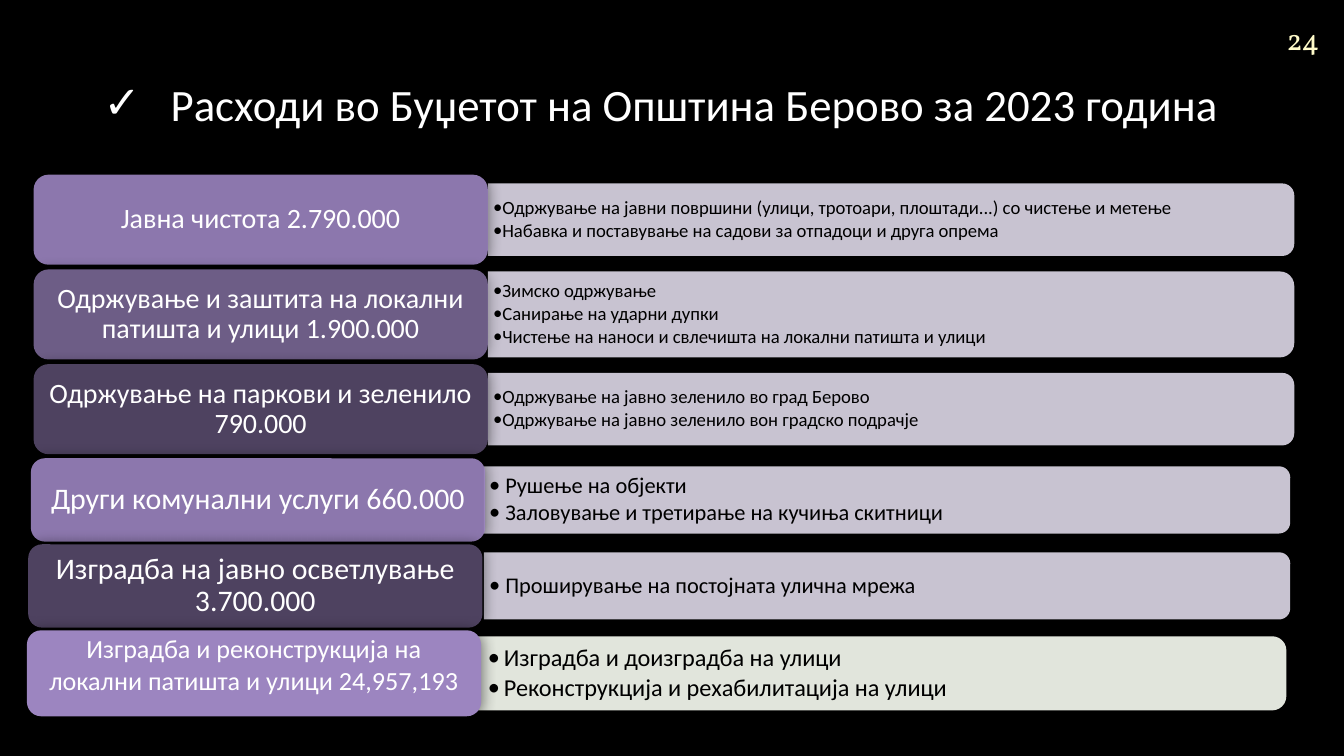
from dataclasses import dataclass

from lxml.etree import SubElement
from pptx import Presentation
from pptx.dml.color import RGBColor
from pptx.enum.shapes import MSO_SHAPE
from pptx.enum.text import MSO_ANCHOR, MSO_AUTO_SIZE, PP_ALIGN
from pptx.oxml.ns import qn
from pptx.util import Inches, Pt


@dataclass(frozen=True)
class Theme:
    font: str = "Calibri"
    number_font: str = "Vollkorn"
    background: str = "000000"
    light: str = "FFFFFF"
    dark: str = "000000"
    number: str = "FEFAC9"
    label: str = "9C85C0"
    panel: str = "DED9E8"
    accent_panel: str = "E1E5DC"
    title_size: int = 24
    number_size: int = 16


THEME = Theme()
SLIDE_WIDTH = 10
SLIDE_HEIGHT = SLIDE_WIDTH * 9 / 16
LABEL_WIDTH, PANEL_WIDTH = 0.338 * SLIDE_WIDTH, 0.6 * SLIDE_WIDTH

# Content
TITLE = "Расходи во Буџетот на Општина Берово за 2023 година"
PAGE_NUMBER = "24"

# Each band stacks its rows at an equal pitch
BANDS = [
    {
        "top": 1.3, "pitch": 0.705, "label_height": 0.67, "panel_left": 3.63,
        "label_size": 15, "item_size": 10, "indent": 0.06, "inset": 0.04, "label_spacing": 0.9,
        "label_bottom": 0.03, "outline": 0, "panel_color": THEME.panel, "panel_alpha": 90,
        "rows": [
            {"label": "Јавна чистота 2.790.000", "left": 0.25, "alpha": 90, "panel_height": 0.54,
             "items": ["Одржување на јавни површини (улици, тротоари, плоштади...) со чистење и метење",
                       "Набавка и поставување на садови за отпадоци и друга опрема"]},
            {"label": "Одржување и заштита на локални патишта и улици 1.900.000",
             "left": 0.25, "alpha": 70, "panel_height": 0.64,
             "items": ["Зимско одржување", "Санирање на ударни дупки",
                       "Чистење на наноси и свлечишта на локални патишта и улици"]},
            {"label": "Одржување на паркови и зеленило 790.000",
             "left": 0.25, "alpha": 50, "panel_height": 0.54,
             "items": ["Одржување на јавно зеленило во град Берово",
                       "Одржување на јавно зеленило вон градско подрачје"]},
        ],
    },
    {
        "top": 3.41, "pitch": 0.64, "label_height": 0.62, "panel_left": 3.6,
        "label_size": 16, "item_size": 12, "indent": 0.12, "inset": 0.04, "label_spacing": 0.9,
        "label_bottom": 0.03, "outline": 0, "panel_color": THEME.panel, "panel_alpha": 90,
        "rows": [
            {"label": "Други комунални услуги 660.000", "left": 0.23, "alpha": 90, "panel_height": 0.5,
             "items": ["Рушење на објекти", "Заловување и третирање на кучиња скитници"]},
            {"label": "Изградба на јавно осветлување 3.700.000",
             "left": 0.21, "alpha": 50, "panel_height": 0.5,
             "items": ["Проширување на постојната улична мрежа"]},
        ],
    },
    {
        "top": 4.69, "pitch": 0.64, "label_height": 0.64, "panel_left": 3.55,
        "label_size": 14, "item_size": 13, "indent": 0.12, "inset": 0.08, "label_spacing": 1.0,
        "label_bottom": 0.17, "outline": 3, "panel_color": THEME.accent_panel, "panel_alpha": 100,
        "rows": [
            {"label": "Изградба и реконструкција на локални патишта и улици 24,957,193",
             "left": 0.2, "alpha": 100, "panel_height": 0.51,
             "items": ["Изградба и доизградба на улици", "Реконструкција и рехабилитација на улици"]},
        ],
    },
]


def set_values(target, values):
    for name, value in values.items():
        setattr(target, name, value)


def place(shape, left, top, width, height):
    set_values(shape, {"left": Inches(left), "top": Inches(top),
                       "width": Inches(width), "height": Inches(height)})


def write(shape, lines, size, color, margins, paragraph_format, font=THEME.font,
          anchor=MSO_ANCHOR.MIDDLE):
    frame = shape.text_frame
    sides = ("margin_left", "margin_top", "margin_right", "margin_bottom")
    set_values(frame, {"word_wrap": True, "auto_size": MSO_AUTO_SIZE.NONE, "vertical_anchor": anchor,
                       **{side: Inches(margin) for side, margin in zip(sides, margins)}})
    frame.text = "\n".join(lines)
    for paragraph in frame.paragraphs:
        set_values(paragraph, paragraph_format)
        for run in paragraph.runs:
            set_values(run.font, {"size": Pt(size), "name": font})
            run.font.color.rgb = RGBColor.from_string(color)


def add_bullets(shape, character, indent, color):
    for paragraph in shape.text_frame.paragraphs:
        properties = paragraph._p.get_or_add_pPr()
        properties.set("marL", str(Inches(indent)))
        properties.set("indent", str(-Inches(indent)))
        bullet_color = SubElement(properties, qn("a:buClr"))
        SubElement(bullet_color, qn("a:srgbClr"), val=color)
        SubElement(properties, qn("a:buFont"), typeface=THEME.font)
        SubElement(properties, qn("a:buChar"), char=character)


def add_block(slide, kind, box, color, alpha, outline=0):
    shape = slide.shapes.add_shape(kind, *(Inches(value) for value in box))
    shape.shadow.inherit = False
    shape.fill.solid()
    shape.fill.fore_color.rgb = RGBColor.from_string(color)
    if outline:
        shape.line.width = Pt(outline)
        shape.line.color.rgb = RGBColor.from_string(color)
    else:
        shape.line.fill.background()
    for color_element in shape.element.iter(qn("a:srgbClr")):
        SubElement(color_element, qn("a:alpha"), val=str(alpha * 1000))
    return shape


def add_soft_shadow(shape):
    effects = shape.element.spPr.find(qn("a:effectLst"))
    shadow = SubElement(effects, qn("a:outerShdw"), blurRad=str(Pt(7.5)), rotWithShape="0")
    color = SubElement(shadow, qn("a:srgbClr"), val=THEME.dark)
    SubElement(color, qn("a:alpha"), val="50000")


def add_row(slide, band, row, top):
    middle = top + band["label_height"] / 2
    height, left = row["panel_height"], band["panel_left"]

    # Panel: a quarter turn puts the two rounded corners on the right
    panel_box = (left + (PANEL_WIDTH - height) / 2, middle - PANEL_WIDTH / 2, height, PANEL_WIDTH)
    panel = add_block(slide, MSO_SHAPE.ROUND_2_SAME_RECTANGLE, panel_box,
                      band["panel_color"], band["panel_alpha"], band["outline"])
    panel.rotation = 90

    # Panel text
    text_box = slide.shapes.add_textbox(0, 0, 0, 0)
    place(text_box, left, middle - height / 2, PANEL_WIDTH, height)
    inset = band["inset"]
    write(text_box, row["items"], band["item_size"], THEME.dark, (inset, 0.02, inset, 0.02),
          {"level": 1, "line_spacing": 0.9, "space_after": Pt(0.15 * band["item_size"])})
    add_bullets(text_box, "•", band["indent"], THEME.dark)

    # Label
    label = add_block(slide, MSO_SHAPE.ROUNDED_RECTANGLE,
                      (row["left"], top, LABEL_WIDTH, band["label_height"]), THEME.label, row["alpha"])
    add_soft_shadow(label)
    write(label, [row["label"]], band["label_size"], THEME.light, (0.06, 0.03, 0.06, band["label_bottom"]),
          {"alignment": PP_ALIGN.CENTER, "line_spacing": band["label_spacing"]})


def main():
    presentation = Presentation()
    set_values(presentation, {"slide_width": Inches(SLIDE_WIDTH), "slide_height": Inches(SLIDE_HEIGHT)})
    slide = presentation.slides.add_slide(presentation.slide_layouts[5])
    slide.background.fill.solid()
    slide.background.fill.fore_color.rgb = RGBColor.from_string(THEME.background)

    # Title and page number
    margins = (0.1,) * 4
    title = slide.shapes.title
    place(title, 0.67, 0.29, 9.16, 0.78)
    write(title, [TITLE], THEME.title_size, THEME.light, margins,
          {"alignment": PP_ALIGN.LEFT}, anchor=MSO_ANCHOR.BOTTOM)
    add_bullets(title, "✓", 0.5, THEME.light)
    number = slide.shapes.add_textbox(0, 0, 0, 0)
    place(number, 9.39, -0.01, 0.61, 0.6)
    write(number, [PAGE_NUMBER], THEME.number_size, THEME.number, margins,
          {"alignment": PP_ALIGN.CENTER}, font=THEME.number_font)

    # Budget rows
    for band in BANDS:
        for index, row in enumerate(band["rows"]):
            add_row(slide, band, row, band["top"] + index * band["pitch"])

    presentation.save("out.pptx")


if __name__ == "__main__":
    main()
